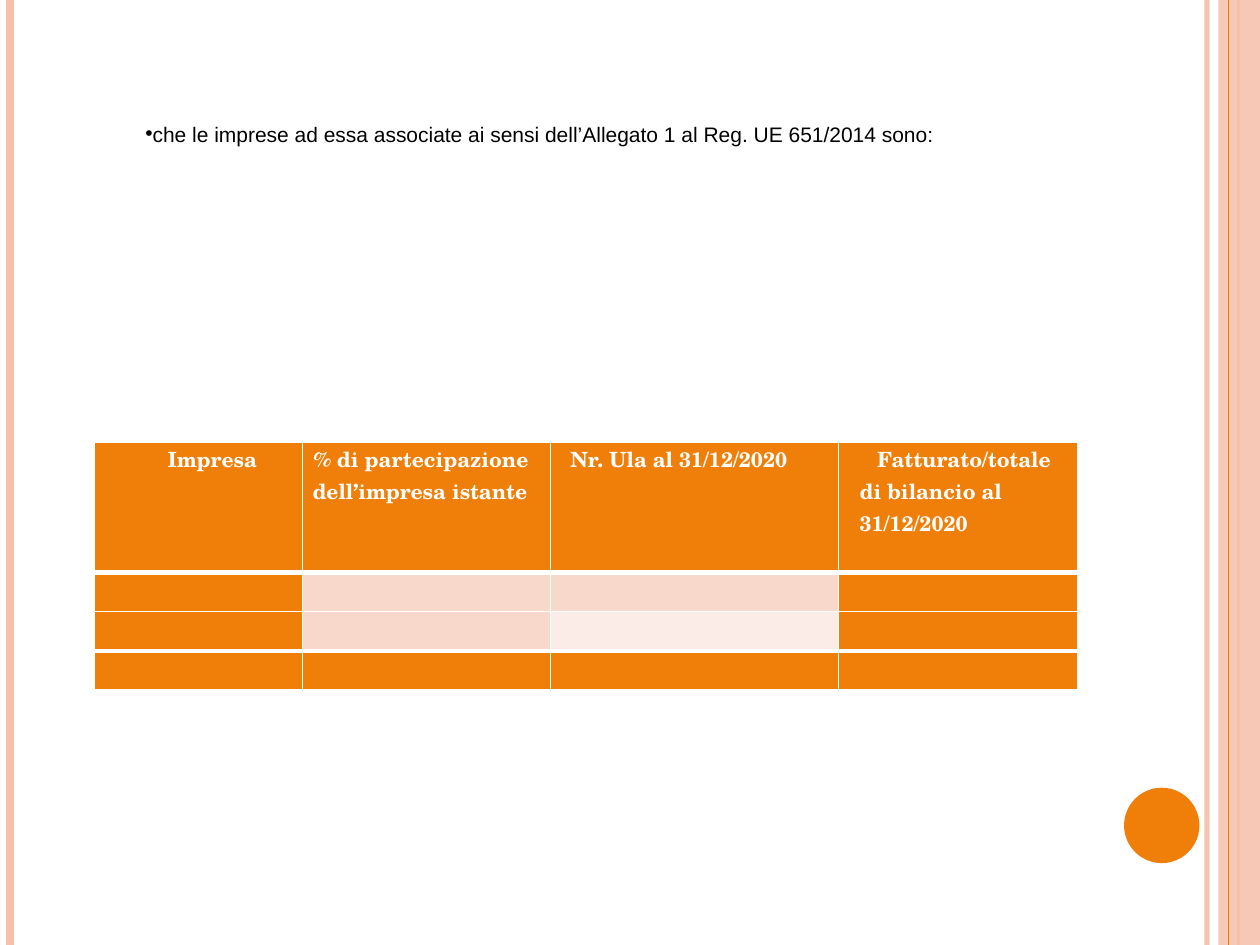
from pptx import Presentation
from pptx import util as u
from pptx.dml.color import RGBColor
from pptx.enum import shapes, text
from pptx.oxml import ns
from lxml import etree

Cm, Pt = u.Cm, u.Pt
COLORS = {"orange": "F07F09", "peach": "F6C0AB", "pink": "F9D8CC",
          "pale": "FCECE7", "white": "FFFFFF", "black": "000000"}
SLIDE_W, SLIDE_H = Cm(25.4), Cm(19.05)
HEADER_FONT = {"name": "TeX Gyre Schola", "size": Pt(12), "bold": True}
BODY_FONT = {"name": "Arial", "size": Pt(12)}
COLUMN_WIDTHS = [4.19, 5.0, 5.8, 4.83]
ROW_HEIGHTS = [2.62, 0.79, 0.79, 0.79]
# Header wording, left margin, first-line indent (cm), space before (pt)
HEADERS = [("Impresa", 1.47, 0, 7.5),
           ("% di partecipazione dell’impresa istante", 0.2, 0.02, 0.2),
           ("Nr. Ula al 31/12/2020", 0.4, 0, 7.5),
           ("Fatturato/totale di bilancio al 31/12/2020", 0.43, 0.35, 0.2)]
ROW_FILLS = [["orange"] * 4,
             ["orange", "pink", "pink", "orange"],
             ["orange", "pink", "pale", "orange"],
             ["orange"] * 4]


def rgb(color):
    return RGBColor.from_string(COLORS[color])


def add_xml(parent, tag, **attributes):
    return etree.SubElement(parent, ns.qn(tag), attributes)


def set_alpha(element, percent):
    color = next(element.iter(ns.qn("a:srgbClr")))
    add_xml(color, "a:alpha", val=str(percent * 1000))


def format_font(font, values, color):
    for name, value in values.items():
        setattr(font, name, value)
    font.color.rgb = rgb(color)


def indent(paragraph, left, first):
    properties = paragraph._p.get_or_add_pPr()
    for name, value in {"marL": left, "indent": first}.items():
        properties.set(name, str(int(Cm(value))))
    return properties


def clear_margins(frame):
    for side in ("left", "top", "right", "bottom"):
        setattr(frame, f"margin_{side}", 0)


def add_stripe(slide, x, color, width, alpha=None):
    stripe = slide.shapes.add_connector(
        shapes.MSO_CONNECTOR.STRAIGHT, Cm(x), 0, Cm(x), SLIDE_H)
    stripe.line.color.rgb = rgb(color)
    stripe.line.width = Pt(width)
    properties = stripe._element.spPr
    if alpha:
        set_alpha(properties, alpha)
    add_xml(properties, "a:effectLst")


def add_plain_shape(slide, kind, box, color, alpha=None):
    shape = slide.shapes.add_shape(kind, *(Cm(v) for v in box))
    shape.shadow.inherit = False
    shape.fill.solid()
    shape.fill.fore_color.rgb = rgb(color)
    shape.line.fill.background()
    if alpha:
        set_alpha(shape._element.spPr, alpha)


def add_statement(slide, wording):
    statement = slide.shapes.add_textbox(Cm(1.27), Cm(2.67), SLIDE_W, Cm(1.27))
    frame = statement.text_frame
    frame.word_wrap = True
    frame.vertical_anchor = text.MSO_ANCHOR.MIDDLE
    clear_margins(frame)
    frame.margin_left, frame.margin_bottom = Cm(1.3), Cm(1.22)
    paragraph = frame.paragraphs[0]
    properties = indent(paragraph, 0, 0.36)
    add_xml(properties, "a:buFont", typeface="Arial")
    add_xml(properties, "a:buChar", char="•")
    run = paragraph.add_run()
    run.text = wording
    format_font(run.font, BODY_FONT, "black")


def add_borders(cell, top, bottom):
    properties = cell._tc.get_or_add_tcPr()
    for side, width in {"L": 1, "R": 1, "T": top, "B": bottom}.items():
        border = add_xml(properties, f"a:ln{side}", w=str(int(Pt(width))))
        fill = add_xml(border, "a:solidFill")
        add_xml(fill, "a:srgbClr", val=COLORS["white"])


def add_company_table(slide):
    table = slide.shapes.add_table(
        len(ROW_HEIGHTS), len(COLUMN_WIDTHS), Cm(1.91), Cm(8.92),
        Cm(sum(COLUMN_WIDTHS)), Cm(sum(ROW_HEIGHTS))).table
    for column, width in zip(table.columns, COLUMN_WIDTHS):
        column.width = Cm(width)
    for row, height in zip(table.rows, ROW_HEIGHTS):
        row.height = Cm(height)

    # Thick rules under the header and above the last row
    thick = {1, len(ROW_HEIGHTS) - 1}
    for r, fills in enumerate(ROW_FILLS):
        for c, color in enumerate(fills):
            cell = table.cell(r, c)
            clear_margins(cell)
            add_borders(cell, 3 if r in thick else 1, 3 if r + 1 in thick else 1)
            cell.fill.solid()
            cell.fill.fore_color.rgb = rgb(color)
            if r:
                end = cell.text_frame.paragraphs[0]._p.get_or_add_endParaRPr()
                end.set("sz", "1200")

    # Header wording
    for c, (wording, left, first, before) in enumerate(HEADERS):
        paragraph = table.cell(0, c).text_frame.paragraphs[0]
        indent(paragraph, left, first)
        paragraph.space_before = Pt(before)
        run = paragraph.add_run()
        run.text = wording
        format_font(run.font, HEADER_FONT, "white")


def main():
    deck = Presentation()
    deck.slide_width, deck.slide_height = SLIDE_W, SLIDE_H
    slide = deck.slides.add_slide(deck.slide_layouts[6])

    # Side stripes and page circle
    add_stripe(slide, 24.33, "peach", 3, 93)
    add_stripe(slide, 0.21, "peach", 4.5)
    add_stripe(slide, 24.97, "peach", 1.5)
    add_plain_shape(slide, shapes.MSO_SHAPE.RECTANGLE,
                    (24.56, 0, 0.84, 19.05), "peach", 87)
    add_stripe(slide, 24.77, "orange", 0.75)
    add_plain_shape(slide, shapes.MSO_SHAPE.OVAL,
                    (22.66, 15.88, 1.52, 1.52), "orange")

    # Content
    add_company_table(slide)
    add_statement(slide, "che le imprese ad essa associate ai sensi "
                         "dell’Allegato 1 al Reg. UE 651/2014 sono:")
    deck.save("out.pptx")


if __name__ == "__main__":
    main()
